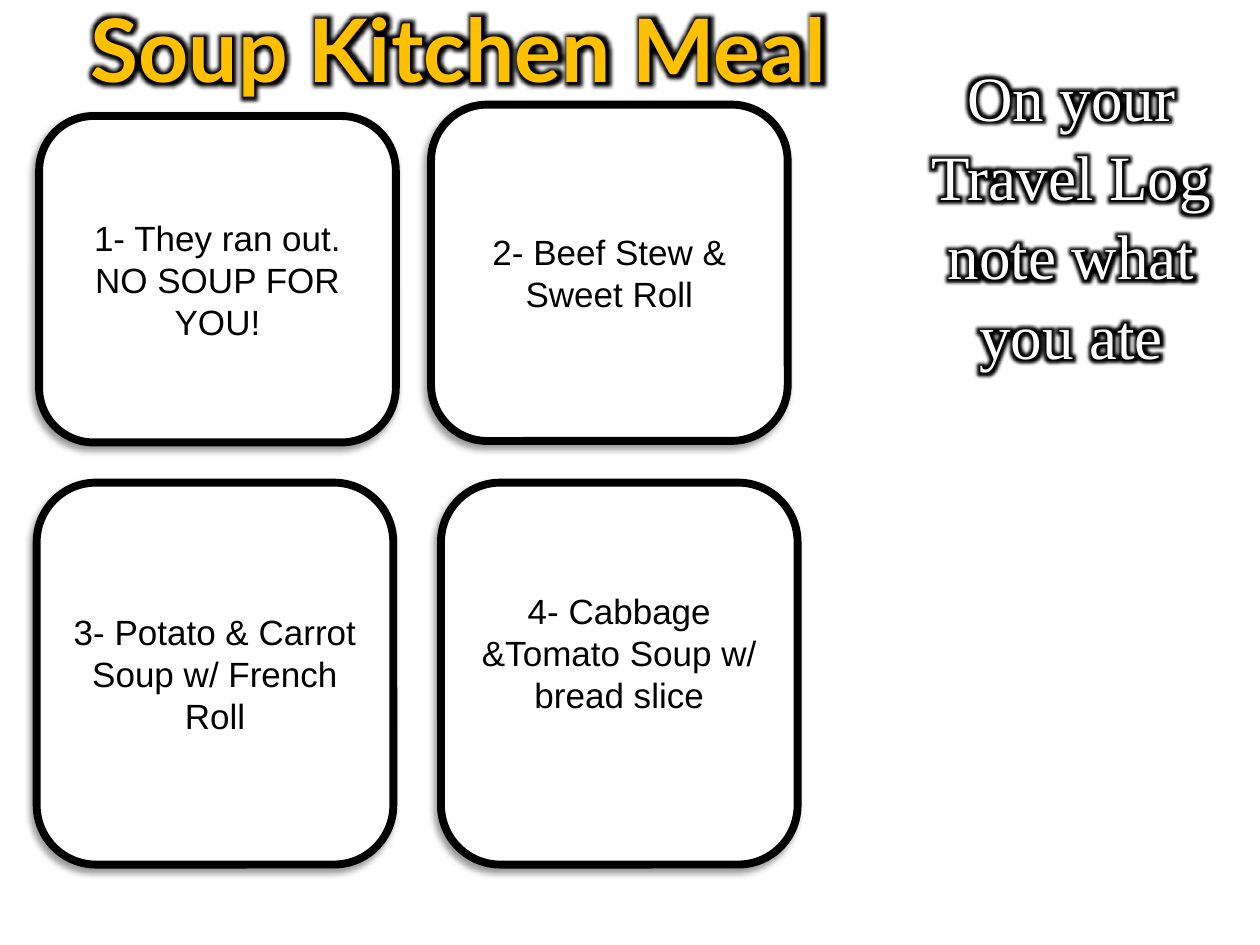
from lxml.etree import SubElement
from pptx import Presentation
from pptx.dml.color import RGBColor
from pptx.enum.shapes import MSO_SHAPE
from pptx.enum.text import MSO_ANCHOR, MSO_AUTO_SIZE, PP_ALIGN
from pptx.oxml.ns import qn
from pptx.util import Cm, Pt

COLORS = {"paper": "FFFFFF", "ink": "000000", "gold": "FFC000"}


def add_effect(properties, effect, color, alpha, **attributes):
    """Append an effect list holding one glow or shadow; alpha is in percent."""
    effects = SubElement(properties, qn("a:effectLst"))
    node = SubElement(effects, qn(f"a:{effect}"),
                      {name: str(value) for name, value in attributes.items()})
    tint = SubElement(node, qn("a:srgbClr"), val=COLORS[color])
    SubElement(tint, qn("a:alpha"), val=str(alpha * 1000))


def write_text(frame, text, font_name, size, color, bold=False):
    frame.text = text
    paragraph = frame.paragraphs[0]
    paragraph.alignment = PP_ALIGN.CENTER
    font = paragraph.font
    font.name, font.size, font.bold = font_name, Pt(size), bold
    font.color.rgb = RGBColor.from_string(COLORS[color])
    return paragraph


prs = Presentation()
prs.slide_width, prs.slide_height = Cm(25.4), Cm(19.05)
slide = prs.slides.add_slide(prs.slide_layouts[5])

# Heading
heading = slide.shapes.title
heading.left, heading.top = Cm(0.08), Cm(-0.23)
heading.width, heading.height = Cm(18.34), Cm(2.39)
heading.text_frame.word_wrap = False
heading.text_frame.auto_size = MSO_AUTO_SIZE.SHAPE_TO_FIT_TEXT
heading.text_frame.vertical_anchor = MSO_ANCHOR.TOP
heading_line = write_text(heading.text_frame, "Soup Kitchen Meal", "Lato", 50, "gold", True)

# Meal cards: left, top, height, bottom inset, text
MEALS = [
    (0.79, 2.34, 6.58, 0.13, "1- They ran out. NO SOUP FOR YOU!"),
    (8.69, 2.11, 6.78, 0.13, "2- Beef Stew & Sweet Roll"),
    (0.74, 9.73, 7.7, 0.13, "3- Potato & Carrot Soup w/ French Roll"),
    (8.89, 9.73, 7.7, 0.97, "4- Cabbage &Tomato Soup w/ bread slice"),
]
for left, top, height, bottom_inset, meal in MEALS:
    card = slide.shapes.add_shape(MSO_SHAPE.ROUNDED_RECTANGLE,
                                  Cm(left), Cm(top), Cm(7.19), Cm(height))
    card.fill.solid()
    card.fill.fore_color.rgb = RGBColor.from_string(COLORS["paper"])
    card.line.color.rgb = RGBColor.from_string(COLORS["ink"])
    card.line.width = Pt(4.5)
    add_effect(card._element.spPr, "outerShdw", "ink", 40,
               blurRad=Pt(4), dist=Pt(3), dir=135 * 60000, rotWithShape=0)
    card.text_frame.word_wrap = True
    card.text_frame.vertical_anchor = MSO_ANCHOR.MIDDLE
    card.text_frame.margin_bottom = Cm(bottom_inset)
    write_text(card.text_frame, meal, "Arial", 20, "ink")

# Reminder beside the cards
reminder = slide.shapes.add_textbox(Cm(18.42), Cm(0.97), Cm(6.35), Cm(6.4))
reminder.text_frame.word_wrap = True
reminder.text_frame.auto_size = MSO_AUTO_SIZE.SHAPE_TO_FIT_TEXT
reminder_line = write_text(reminder.text_frame, "On your Travel Log note what you ate",
                           "Times New Roman", 36, "paper")
reminder_line.line_spacing = 1.05

# Dark halo that sets the bright lettering off from the page
for line in (heading_line, reminder_line):
    add_effect(line.runs[0]._r.get_or_add_rPr(), "glow", "ink", 100, rad=Pt(10))

prs.save("out.pptx")
